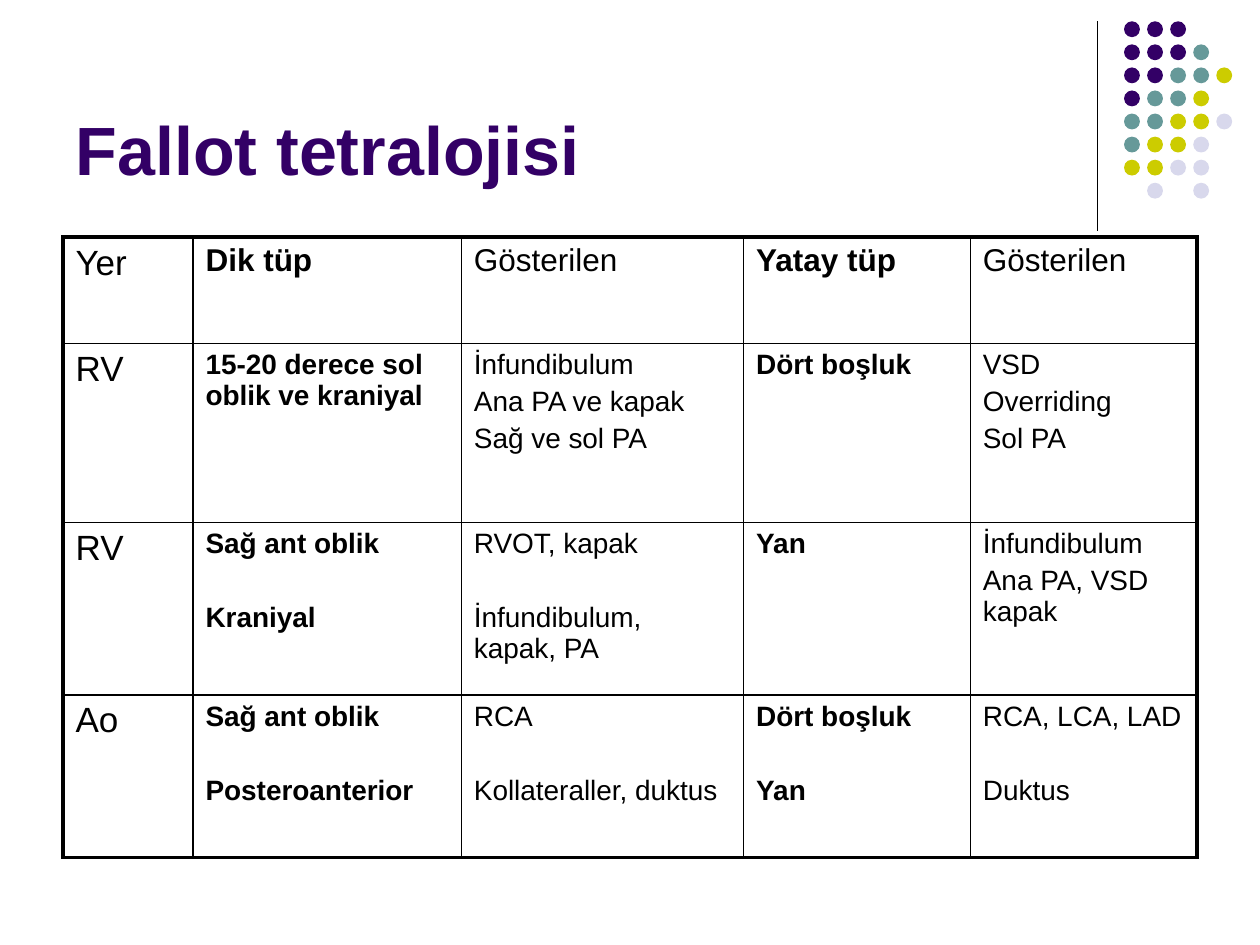
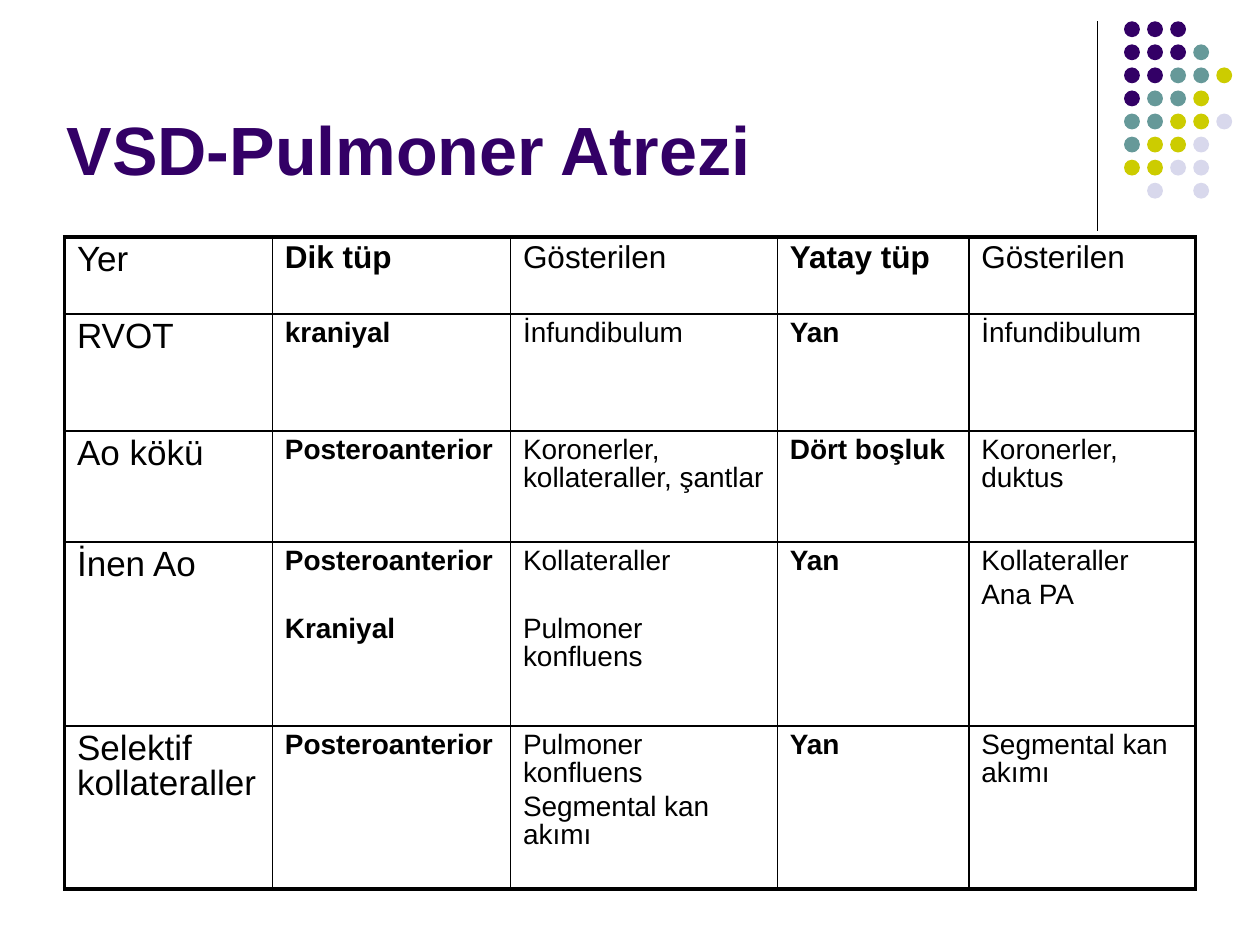
import pptx
import pptx.util
import pptx.dml.color
import pptx.enum.shapes
import pptx.enum.text
import pptx.oxml
import pptx.oxml.ns

Cm, Pt = pptx.util.Cm, pptx.util.Pt
FONT = "Arial"
HUES = {"ink": "000000", "plum": "330066", "teal": "669999",
        "lime": "CCCC00", "mist": "D8D8EC"}

# Dot pattern: one letter per dot, a point where there is none
KEYS = {"p": "plum", "t": "teal", "l": "lime", "m": "mist"}
DOTS = ["ppp..", "pppt.", "ppttl", "pttl.", "ttllm", "tllm.", "llmm.", ".m.m."]

HEAD = ["Yer", "Dik tüp", "Gösterilen", "Yatay tüp", "Gösterilen"]
BOLD = (1, 3)
THIN, THICK = 1, 2.25

# An empty line inside a cell text asks for a wide gap
PAGES = [
    {"title": "Fallot tetralojisi", "left": 1.27,
     "box": (1.27, 4.78), "lead": 1.0,
     "cols": [2.62, 5.41, 5.69, 4.57, 4.57],
     "rows": [2.14, 3.61, 3.48, 3.28],
     "body": [
         ["RV", "15-20 derece sol oblik ve kraniyal",
          "İnfundibulum\nAna PA ve kapak\nSağ ve sol PA",
          "Dört boşluk", "VSD\nOverriding\nSol PA"],
         ["RV", "Sağ ant oblik\n\nKraniyal",
          "RVOT, kapak\n\nİnfundibulum, kapak, PA",
          "Yan", "İnfundibulum\nAna PA, VSD kapak"],
         ["Ao", "Sağ ant oblik\n\nPosteroanterior",
          "RCA\n\nKollateraller, duktus",
          "Dört boşluk\n\nYan", "RCA, LCA, LAD\n\nDuktus"],
     ]},
    {"title": "VSD-Pulmoner Atrezi", "left": 1.09,
     "box": (1.3, 4.78), "lead": 0.9,
     "cols": [4.19, 4.8, 5.38, 3.86, 4.57],
     "rows": [1.55, 2.36, 2.24, 3.71, 3.28],
     "body": [
         ["RVOT", "kraniyal", "İnfundibulum", "Yan", "İnfundibulum"],
         ["Ao kökü", "Posteroanterior", "Koronerler, kollateraller, şantlar",
          "Dört boşluk", "Koronerler, duktus"],
         ["İnen Ao", "Posteroanterior\n\nKraniyal",
          "Kollateraller\n\nPulmoner konfluens",
          "Yan", "Kollateraller\nAna PA"],
         ["Selektif kollateraller", "Posteroanterior",
          "Pulmoner konfluens\nSegmental kan akımı",
          "Yan", "Segmental kan akımı"],
     ]},
]


def tint(name):
    return pptx.dml.color.RGBColor.from_string(HUES[name])


def style(para, size, bold, hue):
    font = para.font
    font.name, font.size, font.bold = FONT, Pt(size), bold
    font.color.rgb = tint(hue)
    para.alignment = pptx.enum.text.PP_ALIGN.LEFT


def add_title(slide, text, left, top, width, height):
    title = slide.shapes.title
    title.left, title.top = Cm(left), Cm(top)
    title.width, title.height = Cm(width), Cm(height)
    frame = title.text_frame
    frame.text = text
    frame.word_wrap = True
    frame.auto_size = pptx.enum.text.MSO_AUTO_SIZE.NONE
    frame.vertical_anchor = pptx.enum.text.MSO_ANCHOR.BOTTOM
    style(frame.paragraphs[0], 39, True, "plum")


def add_corner(slide, left, top):
    """Upright rule with the dot pattern to its right."""
    rule = slide.shapes.add_connector(
        pptx.enum.shapes.MSO_CONNECTOR.STRAIGHT,
        Cm(left), Cm(top), Cm(left), Cm(top + 4.22))
    rule.line.color.rgb = tint("ink")
    rule.line.width = Pt(0.75)
    rule._element.spPr.append(pptx.oxml.parse_xml(
        "<a:effectLst %s/>" % pptx.oxml.ns.nsdecls("a")))

    step, size = 0.465, 0.32
    group = slide.shapes.add_group_shape()
    for row, line in enumerate(DOTS):
        for col, key in enumerate(line):
            if key not in KEYS:
                continue
            dot = group.shapes.add_shape(
                pptx.enum.shapes.MSO_SHAPE.OVAL,
                Cm(left + 0.54 + col * step), Cm(top + row * step),
                Cm(size), Cm(size))
            dot.shadow.inherit = False
            dot.fill.solid()
            dot.fill.fore_color.rgb = tint(KEYS[key])
            dot.line.fill.background()


def add_edges(cell, edges):
    """Draw the four borders; edges maps L, R, T, B to points."""
    props = cell._tc.get_or_add_tcPr()
    for side in "LRTB":
        props.append(pptx.oxml.parse_xml(
            '<a:ln%s %s w="%d"><a:solidFill><a:srgbClr val="%s"/></a:solidFill>'
            '</a:ln%s>' % (side, pptx.oxml.ns.nsdecls("a"),
                           Pt(edges[side]), HUES["ink"], side)))


def fill_cell(cell, text, size, bold, lead):
    frame = cell.text_frame
    near = 0.2 * size
    wide = 2 * near + 1.12 * size * lead
    gap, para = near, frame.paragraphs[0]
    for line in text.split("\n"):
        if not line:
            gap = wide
            continue
        if para.text:
            para = frame.add_paragraph()
        para.text = line
        para.space_before = Pt(gap)
        para.line_spacing = lead
        style(para, size, bold, "ink")
        gap = near


def add_grid(slide, page):
    left, top = page["box"]
    cols, rows = page["cols"], page["rows"]
    grid = slide.shapes.add_table(
        len(rows), len(cols), Cm(left), Cm(top),
        Cm(sum(cols)), Cm(sum(rows))).table
    grid.first_row = grid.horz_banding = False
    for col, width in zip(grid.columns, cols):
        col.width = Cm(width)
    for row, height in zip(grid.rows, rows):
        row.height = Cm(height)

    for r, line in enumerate([HEAD] + page["body"]):
        for c, text in enumerate(line):
            cell = grid.cell(r, c)
            size = 20 if c == 0 else 18 if r == 0 else 16
            fill_cell(cell, text, size, c in BOLD, page["lead"])
            outer = {"L": c == 0, "R": c == len(cols) - 1,
                     "T": r == 0, "B": r == len(rows) - 1}
            add_edges(cell, {side: THICK if out else THIN
                             for side, out in outer.items()})
            cell.fill.background()


def main():
    deck = pptx.Presentation()
    deck.slide_width, deck.slide_height = Cm(25.4), Cm(19.05)
    for page in PAGES:
        slide = deck.slides.add_slide(deck.slide_layouts[5])
        add_corner(slide, 22.12, 0.43)
        add_title(slide, page["title"], page["left"], 0.33, 20.96, 3.61)
        add_grid(slide, page)
    deck.save("out.pptx")


if __name__ == "__main__":
    main()
